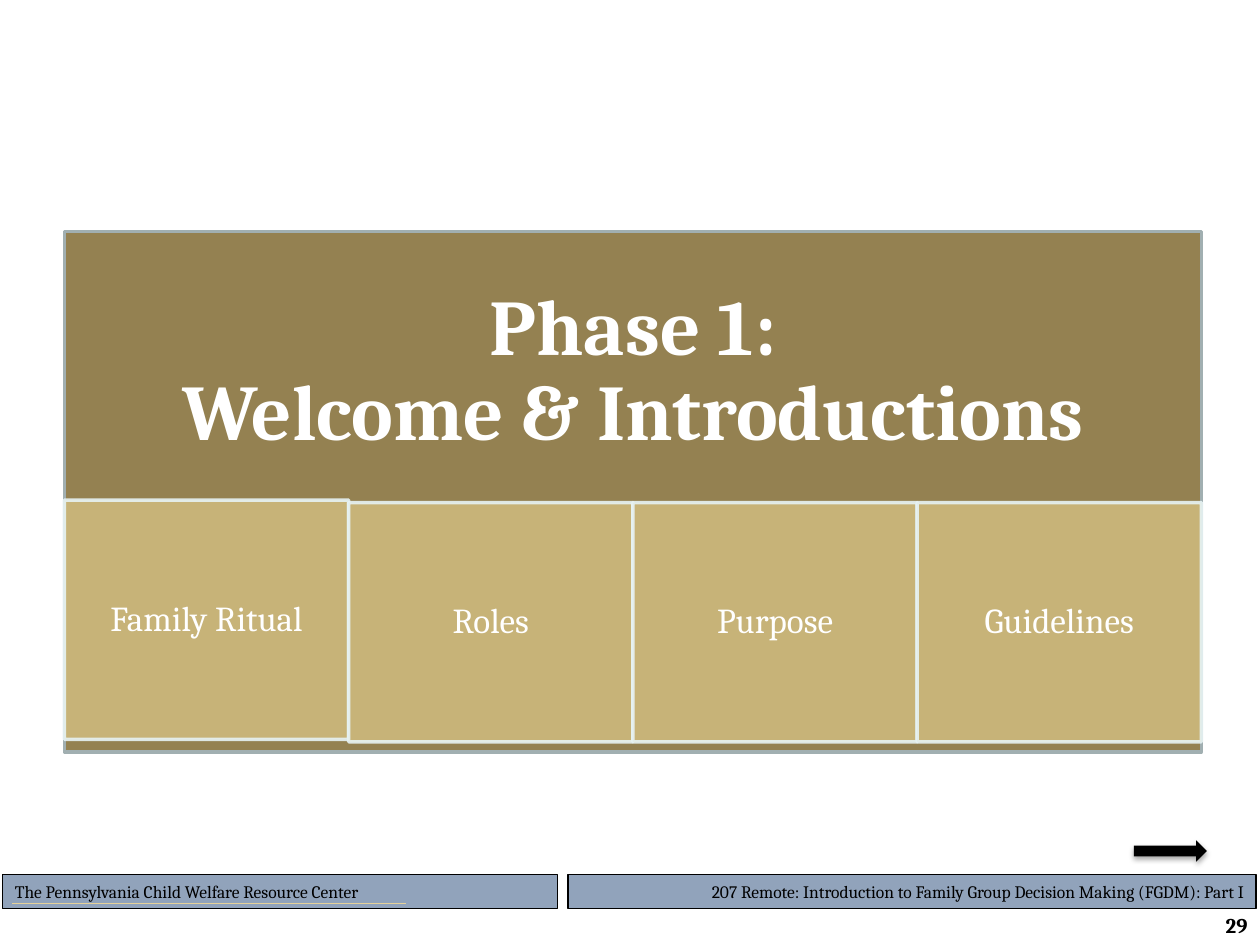
from dataclasses import dataclass

from lxml.etree import SubElement
from pptx import Presentation
from pptx.dml.color import RGBColor
from pptx.enum.shapes import MSO_CONNECTOR, MSO_SHAPE
from pptx.enum.text import MSO_ANCHOR, PP_ALIGN
from pptx.oxml import parse_xml
from pptx.oxml.ns import nsdecls, qn
from pptx.util import Cm, Pt


@dataclass(frozen=True)
class Theme:
    font: str = "Cambria"
    ink: str = "000000"
    white: str = "FFFFFF"
    panel: str = "948151"
    panel_line: str = "A1AFB1"
    card: str = "CDB97D"
    card_line: str = "E7F3F4"
    footer: str = "91A3BB"
    footer_rule: str = "E5D199"
    title_size: int = 45
    card_size: int = 20
    number_size: int = 12
    footer_size: int = 10


@dataclass(frozen=True)
class Box:
    left: float
    top: float
    width: float
    height: float

    def lengths(self):
        return Cm(self.left), Cm(self.top), Cm(self.width), Cm(self.height)


THEME = Theme()


def color(value):
    return RGBColor.from_string(value)


def add_block(slide, box, fill, line=None, line_width=0, kind=MSO_SHAPE.RECTANGLE):
    shape = slide.shapes.add_shape(kind, *box.lengths())
    shape.shadow.inherit = False
    shape.fill.solid()
    shape.fill.fore_color.rgb = color(fill)
    if line:
        shape.line.color.rgb = color(line)
        shape.line.width = Pt(line_width)
    else:
        shape.line.fill.background()
    return shape


def write(shape, text, size, ink, align, bold=False, margins=(0.25, 0.13), spacing=1.0):
    text_frame = shape.text_frame
    text_frame.word_wrap = True
    text_frame.vertical_anchor = MSO_ANCHOR.MIDDLE
    text_frame.margin_left = text_frame.margin_right = Cm(margins[0])
    text_frame.margin_top = text_frame.margin_bottom = Cm(margins[1])
    paragraph = text_frame.paragraphs[0]
    paragraph.text = text
    paragraph.alignment = align
    paragraph.line_spacing = spacing
    for run in paragraph.runs:
        run.font.name = THEME.font
        run.font.size = Pt(size)
        run.font.bold = bold
        run.font.color.rgb = color(ink)


def set_opacity(shape, percent):
    for element in shape.fill._xPr.iter(qn("a:srgbClr")):
        SubElement(element, qn("a:alpha"), val=str(percent * 1000))


def add_phase_panel(slide, box, title, topics):
    add_block(slide, box, THEME.panel, THEME.panel_line, 2)
    title_box = Box(box.left, box.top, box.width, box.height * 0.54)
    heading = slide.shapes.add_textbox(*title_box.lengths())
    write(heading, title, THEME.title_size, THEME.white, PP_ALIGN.CENTER,
          bold=True, margins=(0.89, 0.89), spacing=0.9)

    card_width = box.width / len(topics)
    card_height = box.height * 0.46
    for index, topic in enumerate(topics):
        offset = 5.41 if index == 0 else 5.46
        card_box = Box(box.left + index * card_width, box.top + offset, card_width, card_height)
        card = add_block(slide, card_box, THEME.card, THEME.card_line, 2)
        set_opacity(card, 90)
        write(card, topic, THEME.card_size, THEME.white, PP_ALIGN.CENTER,
              margins=(0.41, 0.08), spacing=0.9)


def add_footer(slide, box, organization, course, number):
    bar_height = 0.69
    left_box = Box(box.left, box.top, 11.18, bar_height)
    right_width = 13.87
    right_box = Box(box.left + box.width - right_width, box.top, right_width, bar_height)
    bars = (
        (right_box, course, PP_ALIGN.RIGHT, 0.75),
        (left_box, organization, PP_ALIGN.LEFT, 0.5),
    )
    for bar_box, text, align, line_width in bars:
        bar = add_block(slide, bar_box, THEME.footer, THEME.ink, line_width)
        write(bar, text, THEME.footer_size, THEME.ink, align)

    rule_top = Cm(box.top + 0.58)
    rule = slide.shapes.add_connector(
        MSO_CONNECTOR.STRAIGHT, Cm(box.left + 0.2), rule_top, Cm(box.left + 8.13), rule_top)
    rule.line.color.rgb = color(THEME.footer_rule)
    rule.line.width = Pt(0.75)
    SubElement(rule._element.spPr, qn("a:effectLst"))

    number_box = Box(22.58, box.top + 0.76, 2.82, 0.53)
    page_number = slide.shapes.add_textbox(*number_box.lengths())
    write(page_number, number, THEME.number_size, THEME.ink, PP_ALIGN.RIGHT, bold=True)


def add_next_arrow(slide, box):
    arrow = add_block(slide, box, THEME.ink, kind=MSO_SHAPE.RIGHT_ARROW)
    properties = arrow._element.spPr
    properties.remove(properties.find(qn("a:effectLst")))
    properties.append(parse_xml(
        f'<a:effectLst {nsdecls("a")}>'
        f'<a:outerShdw blurRad="{Pt(3.1)}" dist="{Pt(1.8)}" dir="5400000" rotWithShape="0">'
        f'<a:srgbClr val="{THEME.ink}"><a:alpha val="35000"/></a:srgbClr>'
        '</a:outerShdw></a:effectLst>'))


def main():
    presentation = Presentation()
    presentation.slide_width = Cm(25.4)
    presentation.slide_height = Cm(19.05)
    slide = presentation.slides.add_slide(presentation.slide_layouts[6])
    add_footer(slide, Box(0.05, 17.63, 25.27, 1.29),
               "The Pennsylvania Child Welfare Resource Center",
               "207 Remote: Introduction to Family Group Decision Making (FGDM): Part I", "29")
    add_phase_panel(slide, Box(1.3, 4.67, 22.92, 10.49),
                    "Phase 1:\vWelcome & Introductions",
                    ("Family Ritual", "Roles", "Purpose", "Guidelines"))
    add_next_arrow(slide, Box(22.86, 16.94, 1.47, 0.43))
    presentation.save("out.pptx")


if __name__ == "__main__":
    main()
